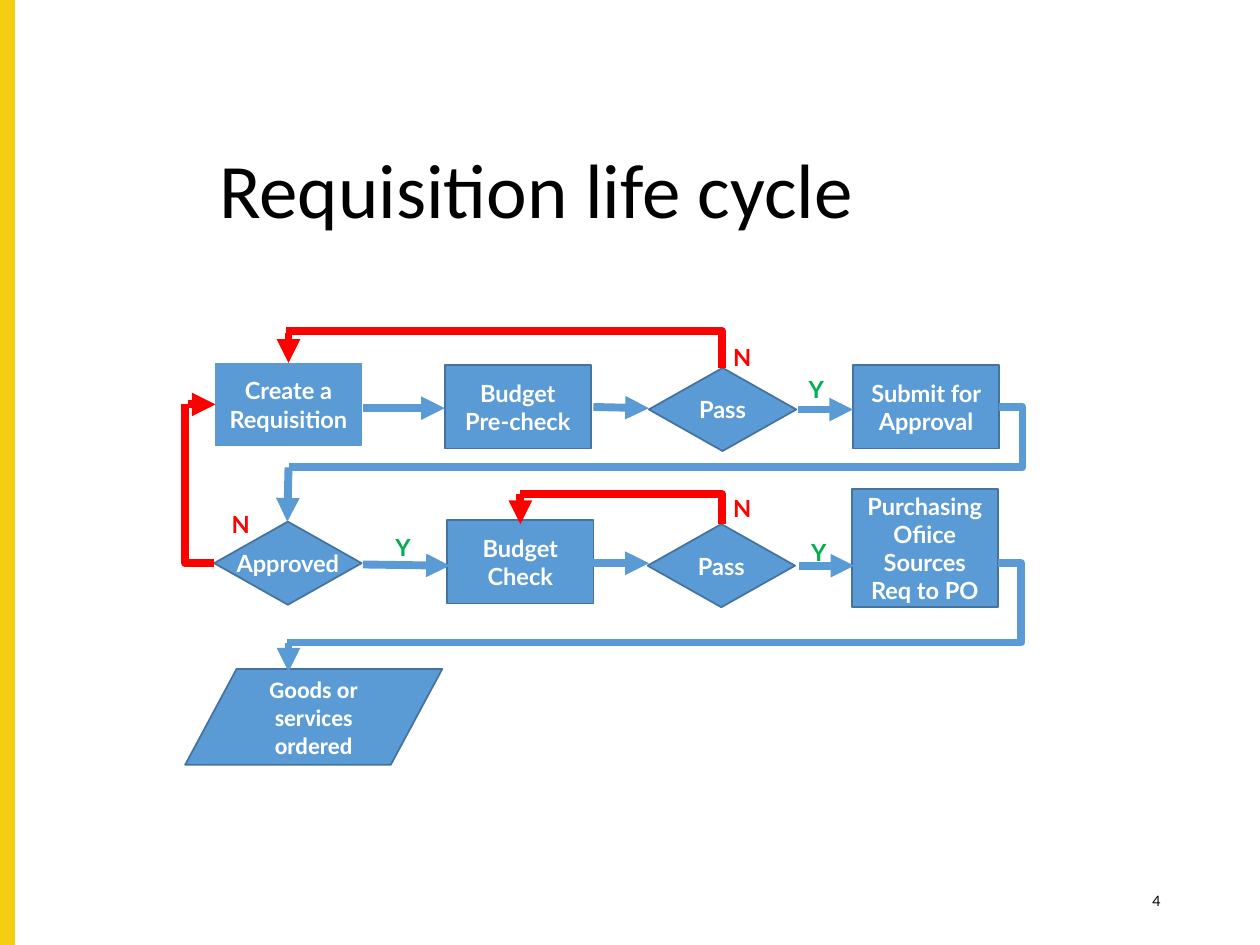
from lxml.etree import SubElement
from pptx import Presentation
from pptx.dml.color import RGBColor
from pptx.enum.shapes import MSO_CONNECTOR as CONN, MSO_SHAPE as SHAPE
from pptx.enum.text import MSO_ANCHOR as ANCHOR, PP_ALIGN as ALIGN
from pptx.oxml.ns import qn
from pptx.util import Inches, Pt

THEME = {
    "band": "F4CE12", "node": "5B9BD5", "edge": "43739E",
    "yes": "00B050", "no": "FF0000", "light": "FFFFFF", "dark": "000000",
    "head": "Calibri", "body": "Lato",
    "title_pt": 44, "text_pt": 13.5, "number_pt": 8.2,
    "arrow_pt": 4.5, "edge_pt": 1,
}

# Content: kind, left, top, text
BOX, TALL, DIAMOND, DATA = "box", "tall", "diamond", "data"
KINDS = {  # preset, width, height, font, wrap
    BOX: (SHAPE.FLOWCHART_PROCESS, 1.16, 0.66, "body", True),
    TALL: (SHAPE.FLOWCHART_PROCESS, 1.16, 0.94, "body", True),
    DIAMOND: (SHAPE.FLOWCHART_DECISION, 1.17, 0.66, "body", False),
    DATA: (SHAPE.FLOWCHART_DATA, 2.04, 0.76, "head", True),
}
START = "Create a Requisition"
NODES = [
    (BOX, 1.71, 2.88, START),
    (BOX, 3.53, 2.9, "Budget Pre-check"),
    (DIAMOND, 5.15, 2.92, "Pass"),
    (BOX, 6.77, 2.9, "Submit for Approval"),
    (DIAMOND, 1.7, 4.14, "Approved"),
    (BOX, 3.55, 4.13, "Budget Check"),
    (DIAMOND, 5.14, 4.16, "Pass"),
    (TALL, 6.76, 3.88, "Purchasing Ofiice Sources Req to PO"),
    (DATA, 1.47, 5.31, "Goods or services ordered"),
]
# Colour, start, end
ARROWS = [
    ("node", (2.88, 3.24), (3.53, 3.24)),
    ("node", (4.71, 3.23), (5.15, 3.24)),
    ("node", (6.33, 3.25), (6.77, 3.25)),
    ("node", (2.29, 3.71), (2.28, 4.14)),
    ("node", (2.88, 4.48), (3.57, 4.49)),
    ("node", (4.71, 4.47), (5.15, 4.47)),
    ("node", (6.34, 4.49), (6.78, 4.49)),
    ("node", (2.29, 5.1), (2.29, 5.33)),
    ("no", (2.29, 2.64), (2.29, 2.88)),
    ("no", (1.49, 3.21), (1.71, 3.21)),
    ("no", (4.13, 3.92), (4.13, 4.16)),
]
# Rows that continue on the next one: start, end
RETURNS = [((7.93, 3.23), (2.29, 3.71)), ((7.92, 4.47), (2.28, 5.1))]
# Rejections: start, end, whether the line leaves upwards
REJECTIONS = [
    ((5.73, 2.92), (2.27, 2.63), True),
    ((5.73, 4.16), (4.13, 3.92), True),
    ((1.7, 4.47), (1.47, 3.21), False),
]
ANSWERS = [
    ("Y", 3.04, 4.18), ("Y", 6.32, 2.93), ("Y", 6.34, 4.22),
    ("N", 1.74, 4), ("N", 5.72, 2.67), ("N", 5.72, 3.87),
]


def rgb(name):
    return RGBColor.from_string(THEME[name])


def write(sp, text, size, color, font="body", bold=True, align=ALIGN.LEFT,
          anchor=ANCHOR.MIDDLE, wrap=True):
    tf = sp.text_frame
    tf.word_wrap, tf.vertical_anchor = wrap, anchor
    p = tf.paragraphs[0]
    p.text, p.alignment = text, align
    f = p.font
    f.name, f.size, f.bold = THEME[font], Pt(THEME[size]), bold
    f.color.rgb = rgb(color)
    return p


def add_block(s, preset, box, fill, edge=None):
    sp = s.shapes.add_shape(preset, *map(Inches, box))
    sp.shadow.inherit = False
    sp.fill.solid()
    sp.fill.fore_color.rgb = rgb(fill)
    if edge:
        sp.line.color.rgb, sp.line.width = rgb(edge), Pt(THEME["edge_pt"])
    else:
        sp.line.fill.background()
    return sp


def add_text(s, box, *args, **kwargs):
    return write(s.shapes.add_textbox(*map(Inches, box)), *args, **kwargs)


def add_line(s, kind, color, start, end, arrow=False):
    c = s.shapes.add_connector(kind, *map(Inches, start + end))
    c.line.color.rgb, c.line.width = rgb(color), Pt(THEME["arrow_pt"])
    pr = c._element.spPr
    if arrow:
        SubElement(pr.find(qn("a:ln")), qn("a:tailEnd"), type="triangle")
    SubElement(pr, qn("a:effectLst"))
    return pr


def add_return(s, start, end):
    """Elbow that swings out beyond its start before running back."""
    pr = add_line(s, CONN.ELBOW, "node", start, end)
    guides = pr.find(qn("a:prstGeom")).get_or_add_avLst()
    SubElement(guides, qn("a:gd"), name="adj1", fmla="val -3300")
    return pr


def add_rejection(s, start, end, upwards):
    """One-corner elbow running up and to the left; turned about its centre."""
    (x1, y1), (x2, y2) = start, end
    w, h = x1 - x2, y1 - y2
    if upwards:
        w, h = h, w
    left, top = (x1 + x2 - w) / 2, (y1 + y2 - h) / 2
    pr = add_line(s, CONN.ELBOW, "no", (left, top), (left + w, top + h))
    pr.find(qn("a:prstGeom")).set("prst", "bentConnector2")
    xfrm = pr.find(qn("a:xfrm"))
    xfrm.set("rot", str((270 if upwards else 180) * 60000))
    if upwards:
        xfrm.set("flipV", "1")


def main():
    prs = Presentation()
    prs.slide_width, prs.slide_height = Inches(10), Inches(7.5)
    s = prs.slides.add_slide(prs.slide_layouts[6])

    # Side band, title and slide number
    add_block(s, SHAPE.RECTANGLE, (0, 0, 0.11, 7.5), "band", "band")
    title = add_text(s, (1.64, 1.21, 6.66, 0.65), "Requisition life cycle",
                     "title_pt", "dark", font="head", bold=False)
    title.line_spacing = 0.9
    add_text(s, (7.06, 6.95, 2.25, 0.4), "4", "number_pt", "dark",
             bold=False, align=ALIGN.RIGHT)

    # Steps; the first one has no outline
    for kind, x, y, text in NODES:
        preset, w, h, font, wrap = KINDS[kind]
        edge = None if text == START else "edge"
        sp = add_block(s, preset, (x, y, w, h), "node", edge)
        write(sp, text, "text_pt", "light", font=font, align=ALIGN.CENTER, wrap=wrap)

    # Connections
    for start, end in RETURNS:
        add_return(s, start, end)
    for start, end, upwards in REJECTIONS:
        add_rejection(s, start, end, upwards)
    for color, start, end in ARROWS:
        add_line(s, CONN.STRAIGHT, color, start, end, arrow=True)

    # Yes and no answers
    for text, x, y in ANSWERS:
        w, color = (0.3, "yes") if text == "Y" else (0.33, "no")
        add_text(s, (x, y, w, 0.33), text, "text_pt", color,
                 anchor=ANCHOR.TOP, wrap=False)

    prs.save("out.pptx")


if __name__ == "__main__":
    main()
